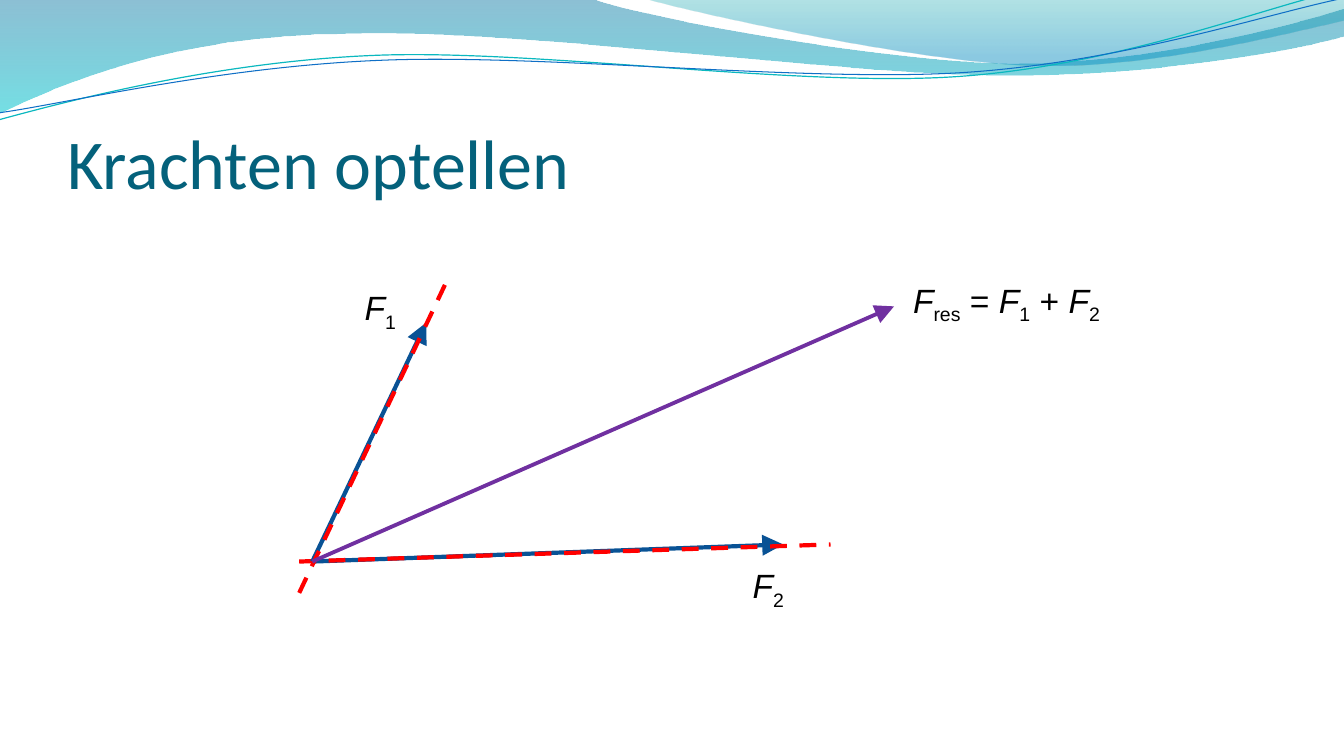
from lxml import etree
from pptx import Presentation
from pptx import util as u
from pptx.dml.color import RGBColor
from pptx.enum import dml, shapes, text
from pptx.oxml.ns import qn

COLOURS = {
    "title": "04617B", "label": "000000",
    "force": "095295", "work line": "FF0000", "resultant": "7030A0",
    "wave top": "0074A1", "wave bottom": "00C6CF",
    "crest top": "00A1A9", "crest bottom": "008BBF",
    "teal strand": "0AB8BF", "blue strand": "0F6FC6",
}

# Outlines in cm: a start point, then lines (one point) and Bezier curves (three points)
WAVE = [
    (0, -0.03), [(14.91, -0.03)],
    [(16.1, 0.43), (22.48, 1.6), (25.68, 1.6)],
    [(28.91, 1.6), (32.46, 0.66), (33.86, 0.23)],
    [(33.91, 0.91)],
    [(33.3, 1.12), (29.46, 1.93), (25.25, 1.9)],
    [(21.06, 1.9), (12.93, 0.71), (8.71, 0.86)],
    [(4.37, 0.89), (1.55, 2.11), (-0.03, 2.87)],
]
CREST = [
    (16.23, -0.03),
    [(17.25, 0.28), (23.09, 1.57), (26.04, 1.65)],
    [(28.98, 1.75), (32.56, 0.81), (33.86, 0.53)],
    [(33.86, 0)],
]
TEAL_STRAND = [
    (-0.03, 3.02),
    [(1.63, 2.57), (5.36, 1.57), (9.37, 1.4)],
    [(13.39, 1.22), (20.07, 2.21), (24.13, 1.93)],
    [(28.19, 1.65), (31.8, 0.2), (33.81, -0.25)],
]
BLUE_STRAND = [
    (0, 2.84),
    [(1.6, 2.62), (5.54, 1.68), (9.6, 1.52)],
    [(13.64, 1.35), (20.22, 2.08), (24.26, 1.83)],
    [(28.32, 1.57), (31.88, 0.36), (33.88, -0.05)],
]


def rgb(name):
    """Return the named colour."""
    return RGBColor.from_string(COLOURS[name])


def add_outline(slide, outline, close):
    """Draw an outline of lines and curves as a freeform."""
    start, *segments = outline
    builder = slide.shapes.build_freeform(*(u.Cm(v) for v in start))
    for segment in segments:
        builder.add_line_segments([(u.Cm(x), u.Cm(y)) for x, y in segment], close=False)
    if close:
        builder.add_line_segments([], close=True)
    shape = builder.convert_to_shape()
    shape.shadow.inherit = False

    # Join the three steps of each curve into one Bezier segment
    steps = iter(list(shape._element.spPr.iter(qn("a:lnTo"))))
    for segment in segments:
        first, *others = [next(steps) for _ in segment]
        if others:
            first.tag = qn("a:cubicBezTo")
            for step in others:
                first.append(step[0])
                step.getparent().remove(step)
    return shape


def add_wave(slide, outline, stops):
    """Draw a translucent band; stops are (position, colour, opacity in %)."""
    wave = add_outline(slide, outline, close=True)
    wave.line.fill.background()
    wave.fill.gradient()
    wave.fill.gradient_angle = 270
    for stop, (position, colour, _) in zip(wave.fill.gradient_stops, stops):
        stop.position = position
        stop.color.rgb = rgb(colour)
    tints = wave._element.spPr.iter(qn("a:srgbClr"))
    for tint, (_, _, opacity) in zip(list(tints), stops):
        etree.SubElement(tint, qn("a:alpha"), val=str(opacity * 1000))


def add_strand(slide, outline, colour, width):
    """Draw a thin curved line."""
    strand = add_outline(slide, outline, close=False)
    strand.fill.background()
    strand.line.color.rgb = rgb(colour)
    strand.line.width = u.Pt(width)


def add_line(slide, start, end, colour, width=3, arrow=False, dashed=False):
    """Draw a straight line between two points in cm."""
    line = slide.shapes.add_connector(
        shapes.MSO_CONNECTOR.STRAIGHT, *(u.Cm(v) for v in (*start, *end)))
    line.line.color.rgb = rgb(colour)
    line.line.width = u.Pt(width)
    if dashed:
        line.line.dash_style = dml.MSO_LINE.DASH
    if arrow:
        etree.SubElement(line.line._get_or_add_ln(), qn("a:tailEnd"),
                         type="triangle", w="lg", len="lg")
    etree.SubElement(line._element.spPr, qn("a:effectLst"))


def add_text_box(slide, left, top, width, height):
    """Add an empty text box, in cm."""
    return slide.shapes.add_textbox(*(u.Cm(v) for v in (left, top, width, height))).text_frame


def style(run, font, size, colour):
    """Set the font, size and colour of a run."""
    run.font.name = font
    run.font.size = u.Pt(size)
    run.font.color.rgb = rgb(colour)


def add_title(slide, wording):
    """Add the slide title, standing on the bottom of its box."""
    title = add_text_box(slide, 1.7, 1.96, 30.48, 3.18)
    title.word_wrap = True
    title.vertical_anchor = text.MSO_ANCHOR.BOTTOM
    title.margin_left = title.margin_right = title.margin_bottom = 0
    title.margin_top = u.Cm(0.13)
    title.text = wording
    style(title.paragraphs[0].runs[0], "Calibri", 50, "title")


def add_formula(slide, left, top, width, *parts):
    """Add a formula: F is italic, a part that starts with _ is a subscript."""
    formula = add_text_box(slide, left, top, width, 1.27)
    formula.word_wrap = False
    formula.auto_size = text.MSO_AUTO_SIZE.SHAPE_TO_FIT_TEXT
    for part in parts:
        run = formula.paragraphs[0].add_run()
        run.text = part.lstrip("_")
        style(run, "Arial", 24, "label")
        run.font.italic = part == "F"
        if part.startswith("_"):
            run._r.get_or_add_rPr().set("baseline", "-25000")


def main():
    """Build the slide on adding forces."""
    deck = Presentation()
    deck.slide_width, deck.slide_height = u.Cm(33.87), u.Cm(19.05)
    slide = deck.slides.add_slide(deck.slide_layouts[6])

    add_wave(slide, WAVE, [(0, "wave top", 45), (1, "wave bottom", 55)])
    add_wave(slide, CREST, [(0, "crest top", 30), (0.8, "crest bottom", 45)])
    add_strand(slide, TEAL_STRAND, "teal strand", 0.85)
    add_strand(slide, BLUE_STRAND, "blue strand", 0.75)
    add_title(slide, "Krachten optellen")

    origin = (7.87, 14.15)
    add_line(slide, origin, (19.74, 13.72), "force", arrow=True)
    add_line(slide, (7.54, 14.15), (20.93, 13.72), "work line", dashed=True)
    add_line(slide, origin, (10.74, 8.13), "force", arrow=True)
    add_line(slide, (7.54, 14.94), (11.33, 6.93), "work line", dashed=True)
    add_line(slide, origin, (22.53, 7.72), "resultant", width=2.75, arrow=True)

    add_formula(slide, 8.94, 7.11, 1.35, "F", "_1")
    add_formula(slide, 18.72, 14.12, 1.35, "F", "_2")
    add_formula(slide, 22.76, 6.93, 5.44, "F", "_res", " = ", "F", "_1", " + ", "F", "_2")

    deck.save("out.pptx")


main()
